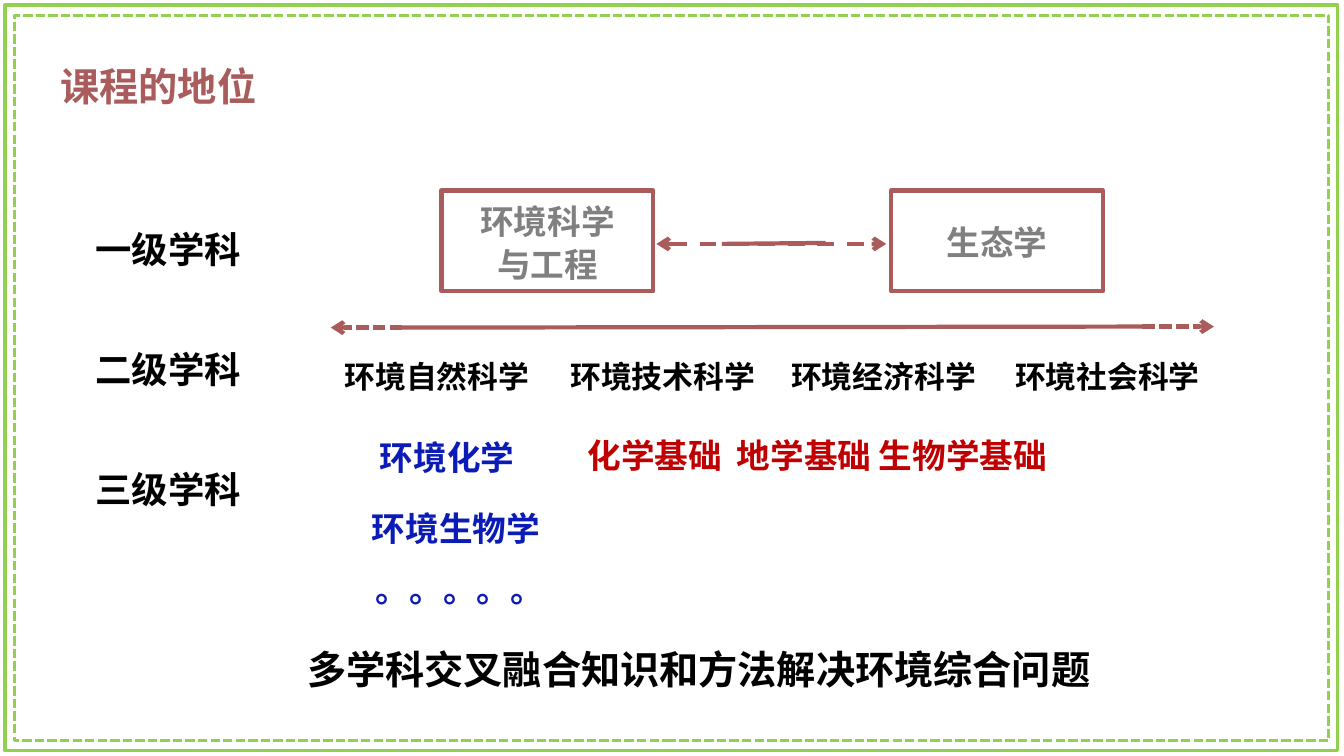
import dataclasses

import lxml.etree
import pptx
import pptx.dml.color
import pptx.enum.dml
import pptx.enum.shapes
import pptx.enum.text
import pptx.oxml.ns
import pptx.util

EMU_PER_PX = 9144  # 100 px to the inch
LINE_HEIGHT = 1.3  # in ems
DASH = pptx.enum.dml.MSO_LINE.DASH
SHORT_DASH = pptx.enum.dml.MSO_LINE.SQUARE_DOT
LEFT = pptx.enum.text.PP_ALIGN.LEFT
CENTER = pptx.enum.text.PP_ALIGN.CENTER


@dataclasses.dataclass(frozen=True)
class Theme:
    font: str = "Noto Sans CJK SC"
    brick: str = "AA5C5C"
    green: str = "92D050"
    black: str = "000000"
    gray: str = "808080"
    blue: str = "0B1BB5"
    red: str = "C00000"
    headline: int = 28
    level: int = 26
    body: int = 24
    branch: int = 22
    rule: float = 3
    border: float = 2.25


THEME = Theme()


def px(length):
    return pptx.util.Emu(length * EMU_PER_PX)


def add_xml(parent, tag, **attributes):
    return lxml.etree.SubElement(parent, pptx.oxml.ns.qn(tag), attributes)


def color(code):
    return pptx.dml.color.RGBColor.from_string(code)


def style_line(line, code, width, dash=None):
    line.color.rgb = color(code)
    line.width = pptx.util.Pt(width)
    if dash is not None:
        line.dash_style = dash


def write(shape, lines, size, code, align=LEFT, line_height=LINE_HEIGHT, tab=None):
    frame = shape.text_frame
    frame.word_wrap = True
    frame.auto_size = pptx.enum.text.MSO_AUTO_SIZE.NONE
    frame.vertical_anchor = pptx.enum.text.MSO_ANCHOR.TOP
    for index, line in enumerate(lines):
        para = frame.add_paragraph() if index else frame.paragraphs[0]
        para.alignment = align
        para.line_spacing = pptx.util.Pt(round(size * line_height))
        para.space_before = pptx.util.Pt(0)
        if tab:
            stops = add_xml(para._p.get_or_add_pPr(), "a:tabLst")
            add_xml(stops, "a:tab", pos=str(px(tab)), algn="l")
        span = para.add_run()
        span.text = line
        span.font.name = THEME.font
        span.font.size = pptx.util.Pt(size)
        span.font.bold = True
        span.font.color.rgb = color(code)
        add_xml(span._r.get_or_add_rPr(), "a:ea", typeface=THEME.font)


def add_label(page, box, lines, size, code, **options):
    label = page.shapes.add_textbox(*map(px, box))
    write(label, lines, size, code, **options)


def add_outline(page, box, code, width, dash=None):
    outline = page.shapes.add_shape(
        pptx.enum.shapes.MSO_SHAPE.RECTANGLE, *map(px, box))
    outline.shadow.inherit = False
    outline.fill.background()
    style_line(outline.line, code, width, dash)


def add_rule(page, start, end, dash=None, arrows=()):
    rule = page.shapes.add_connector(
        pptx.enum.shapes.MSO_CONNECTOR.STRAIGHT, *map(px, start + end))
    style_line(rule.line, THEME.brick, THEME.rule, dash)
    for arrow in arrows:
        add_xml(rule.line._get_or_add_ln(), arrow, type="arrow")
    add_xml(rule._element.spPr, "a:effectLst")


def draw_border(page, box):
    left, top, width, height = box
    add_outline(page, box, THEME.green, THEME.border)
    inner = (left + 9, top + 10, width - 18, height - 20)
    add_outline(page, inner, THEME.green, THEME.border, SHORT_DASH)


def draw_title(page, box):
    title = page.shapes.title
    title.left, title.top, title.width, title.height = map(px, box)
    write(title, ["课程的地位"], THEME.headline, THEME.brick, line_height=1.52)


def draw_levels(page, box):
    left, top, width, height = box
    for index, name in enumerate(["一级学科", "二级学科", "三级学科"]):
        add_label(page, (left, top + index * 119, width, height),
                  [name], THEME.level, THEME.black)


def draw_first_level(page, box):
    left, top, width, height = box
    card_width = 210
    right = left + width - card_width
    for card_left in (left, right):
        add_outline(page, (card_left, top, card_width, height),
                    THEME.brick, THEME.rule)
    add_label(page, (left + 7, top + 2, 196, 107), ["环境科学", "与工程"],
              THEME.body, THEME.gray, align=CENTER)
    add_label(page, (right + 34, top + 23, 142, 50), ["生态学"],
              THEME.body, THEME.gray, align=CENTER)
    # Two-way arrow with a solid middle
    middle = top + 53
    add_rule(page, (left + 213, middle), (right - 5, middle), DASH,
             ("a:headEnd", "a:tailEnd"))
    add_rule(page, (left + 278, middle), (right - 65, middle - 1))


def draw_second_level(page, box):
    left, top, width, height = box
    # Spectrum line with dashed, arrowed ends
    start, end = (left + 67, top + 1), (left + width - 71, top)
    add_rule(page, start, end)
    add_rule(page, end, (left + width, top), SHORT_DASH, ("a:tailEnd",))
    add_rule(page, (left + 71, top + 1), (left, top + 1), SHORT_DASH,
             ("a:tailEnd",))
    branches = [("环境自然科学", 4), ("环境技术科学", 228),
                ("环境经济科学", 447), ("环境社会科学", 669)]
    for name, offset in branches:
        add_label(page, (left + offset, top + 22, 217, height - 22),
                  [name], THEME.branch, THEME.black)


def draw_third_level(page, box):
    left, top, width, height = box
    subjects = [("环境化学", 8, 2), ("环境生物学", 0, 73), ("。。。。。", 4, 133)]
    for name, across, down in subjects:
        add_label(page, (left + across, top + down, 189, 50),
                  [name], THEME.body, THEME.blue)
    add_label(page, (left + 214, top, width - 214, 50),
              ["化学基础\t地学基础 生物学基础"], THEME.body, THEME.red, tab=148)


def draw_conclusion(page, box):
    add_label(page, box, ["多学科交叉融合知识和方法解决环境综合问题"],
              THEME.headline, THEME.black, align=CENTER)


def main():
    deck = pptx.Presentation()
    deck.slide_width, deck.slide_height = px(1333), px(750)
    page = deck.slides.add_slide(deck.slide_layouts[5])
    draw_border(page, (5, 5, 1322, 740))
    draw_title(page, (50, 44, 425, 66))
    draw_levels(page, (85, 217, 187, 54))
    draw_first_level(page, (438, 189, 656, 100))
    draw_second_level(page, (328, 324, 876, 69))
    draw_third_level(page, (359, 423, 762, 183))
    draw_conclusion(page, (160, 632, 1066, 57))
    deck.save("out.pptx")


if __name__ == "__main__":
    main()
